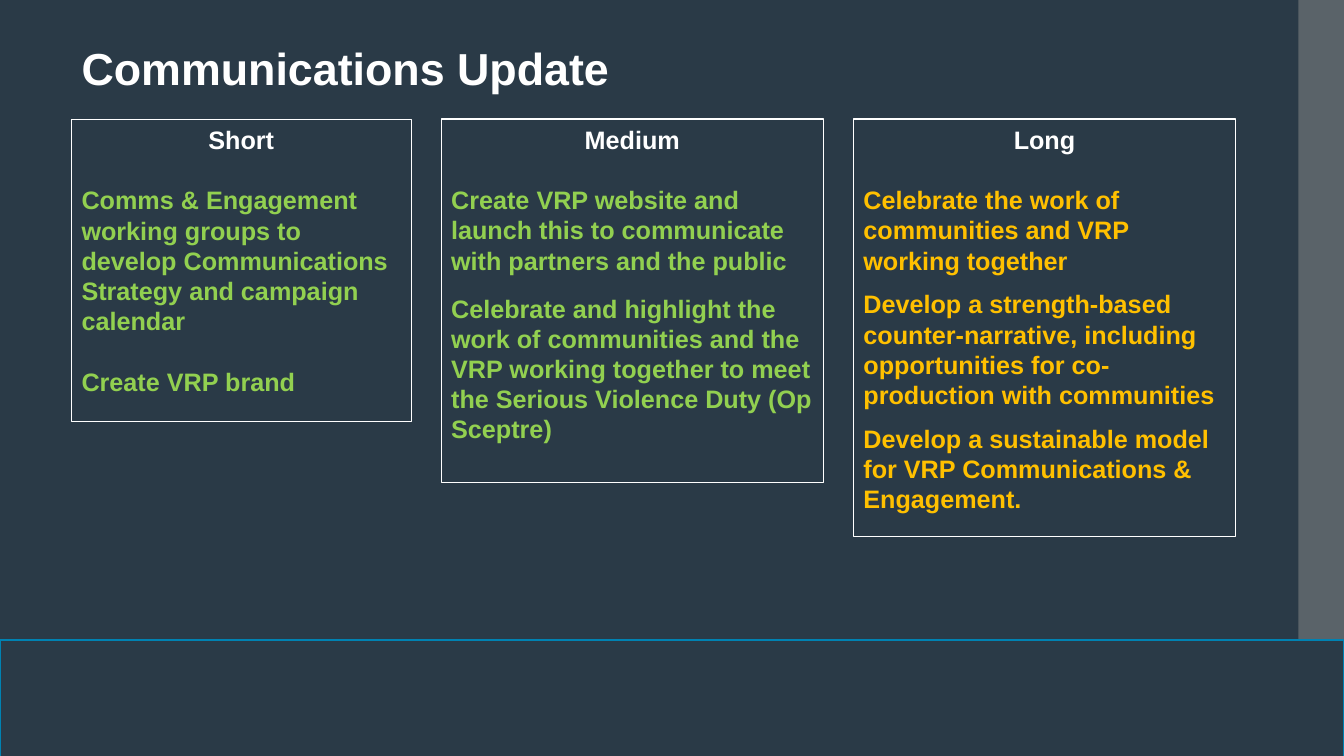
"""Build the Communications Update slide with short, medium and long term columns."""
from dataclasses import dataclass

from pptx import Presentation
from pptx.dml import color
from pptx.enum import shapes, text
from pptx.oxml import xmlchemy
from pptx.oxml import ns
from pptx.util import Cm, Pt
from lxml import etree

TITLE = "Communications Update"
COLUMNS = [
    {"heading": "Short", "tone": "green", "width": 8.56, "height": 7.62, "gap": 18, "actions": [
        "Comms & Engagement working groups to develop Communications Strategy and campaign calendar",
        "Create VRP brand",
    ]},
    {"heading": "Medium", "tone": "green", "width": 9.63, "height": 9.17, "gap": 10.5, "actions": [
        "Create VRP website and launch this to communicate with partners and the public",
        "Celebrate and highlight the work of communities and the VRP working together "
        "to meet the Serious Violence Duty (Op Sceptre)",
    ]},
    {"heading": "Long", "tone": "amber", "width": 9.63, "height": 10.52, "gap": 8, "actions": [
        "Celebrate the work of communities and VRP working together",
        "Develop a strength-based counter-narrative, including opportunities "
        "for co-production with communities",
        "Develop a sustainable model for VRP Communications & Engagement.",
    ]},
]


@dataclass(frozen=True)
class Theme:
    font: str = "Arial"
    background: str = "2A3A47"
    white: str = "FFFFFF"
    green: str = "92D050"
    amber: str = "FFC000"
    sidebar: str = "8B8C8C"
    footer_line: str = "0082B2"
    title_size: float = 32
    body_size: float = 18
    leading: float = 1.2


THEME = Theme()
SLIDE_WIDTH, SLIDE_HEIGHT = 33.87, 19.05
LEFT, COLUMN_TOP, COLUMN_GAP = 1.8, 3.0, 0.76
SIDEBAR_LEFT, FOOTER_TOP, FOOTER_HEIGHT = 32.72, 16.13, 3.18


def rgb(value):
    return color.RGBColor.from_string(value)


def place(shape, left, top, width, height):
    shape.left, shape.top, shape.width, shape.height = map(Cm, (left, top, width, height))


def write(frame, words, *, size=THEME.body_size, tone=THEME.white,
          align=text.PP_ALIGN.LEFT, before=0, first=False):
    paragraph = frame.paragraphs[0] if first else frame.add_paragraph()
    properties = paragraph._p.get_or_add_pPr()
    properties.set("marL", "0")
    properties.set("indent", "0")
    etree.SubElement(properties, ns.qn("a:buNone"))
    paragraph.alignment = align
    paragraph.line_spacing = Pt(size * THEME.leading)
    paragraph.space_before = Pt(before)
    paragraph.space_after = Pt(0)
    run = paragraph.add_run()
    run.text = words
    run.font.name, run.font.size, run.font.bold = THEME.font, Pt(size), True
    run.font.color.rgb = rgb(tone)


def prepare(frame):
    frame.word_wrap = True
    frame.auto_size = text.MSO_AUTO_SIZE.NONE
    frame.vertical_anchor = text.MSO_ANCHOR.TOP


def add_block(slide, left, top, width, height, fill):
    block = slide.shapes.add_shape(shapes.MSO_SHAPE.RECTANGLE, *map(Cm, (left, top, width, height)))
    block.shadow.inherit = False
    block.fill.solid()
    block.fill.fore_color.rgb = rgb(fill)
    block.line.fill.background()
    return block


def add_frame_decor(slide):
    sidebar = add_block(slide, SIDEBAR_LEFT, 0, SLIDE_WIDTH - SIDEBAR_LEFT, SLIDE_HEIGHT, THEME.sidebar)
    fill_color = sidebar.fill._xPr.find(".//" + ns.qn("a:srgbClr"))
    etree.SubElement(fill_color, ns.qn("a:alpha"), val="50000")
    footer = add_block(slide, 0, FOOTER_TOP, SLIDE_WIDTH, FOOTER_HEIGHT, THEME.background)
    footer.line.color.rgb = rgb(THEME.footer_line)
    footer.line.width = Pt(1.5)


def fill_column(box, column, left):
    place(box, left, COLUMN_TOP, column["width"], column["height"])
    box.line.color.rgb = rgb(THEME.white)
    box.line.width = Pt(0.75)
    frame = box.text_frame
    prepare(frame)
    write(frame, column["heading"], align=text.PP_ALIGN.CENTER, first=True)
    for index, action in enumerate(column["actions"]):
        gap = column["gap"] if index else THEME.body_size
        write(frame, action, tone=getattr(THEME, column["tone"]), before=gap * THEME.leading)


def main():
    presentation = Presentation()
    presentation.slide_width, presentation.slide_height = Cm(SLIDE_WIDTH), Cm(SLIDE_HEIGHT)
    slide = presentation.slides.add_slide(presentation.slide_layouts[1])
    slide.background.fill.solid()
    slide.background.fill.fore_color.rgb = rgb(THEME.background)
    add_frame_decor(slide)

    title = slide.shapes.title
    place(title, LEFT, 0.89, 29.36, 2.13)
    prepare(title.text_frame)
    write(title.text_frame, TITLE, size=THEME.title_size, first=True)

    left = LEFT
    for index, column in enumerate(COLUMNS):
        box = slide.shapes.add_textbox(0, 0, 0, 0) if index else slide.placeholders[1]
        fill_column(box, column, left)
        left += column["width"] + COLUMN_GAP
    presentation.save("out.pptx")


if __name__ == "__main__":
    main()
